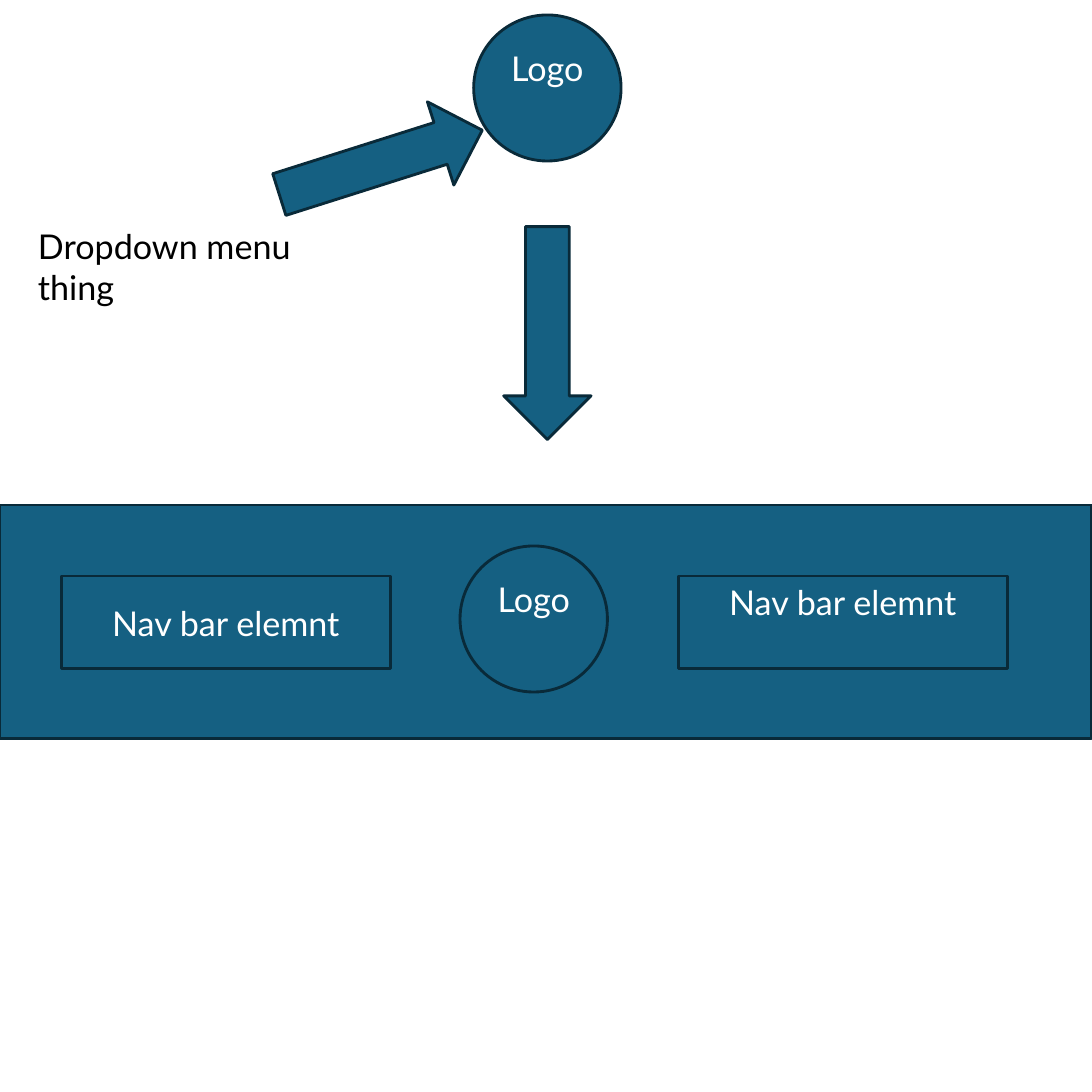
from pptx import Presentation
from pptx.dml.color import RGBColor
from pptx.enum.shapes import MSO_SHAPE
from pptx.enum.text import MSO_ANCHOR, PP_ALIGN
from pptx.util import Emu, Pt

EMU_PER_PX = 9144  # 100 px to the inch
SLIDE_SIZE = 800
INSET = 5
LINE_HEIGHT = 30
COLORS = {"fill": "156082", "outline": "092A39", "light": "FFFFFF", "dark": "000000"}


def px(length):
    return Emu(length * EMU_PER_PX)


def color(name):
    return RGBColor.from_string(COLORS[name])


def write_text(frame, text, font="Lato", size=18, ink="light",
               align=PP_ALIGN.CENTER, anchor=MSO_ANCHOR.MIDDLE, bottom=INSET):
    frame.word_wrap = True
    frame.vertical_anchor = anchor
    frame.margin_bottom = px(bottom)
    paragraph = frame.paragraphs[0]
    paragraph.alignment = align
    run = paragraph.add_run()
    run.text = text
    run.font.name = font
    run.font.size = Pt(size)
    run.font.color.rgb = color(ink)


class Wireframe:
    def __init__(self, slide, line_width=1.5):
        self.slide = slide
        self.line_width = Pt(line_width)

    def block(self, kind, left, top, width, height, rotation=0):
        shape = self.slide.shapes.add_shape(
            kind, px(left), px(top), px(width), px(height))
        shape.rotation = rotation
        shape.shadow.inherit = False
        shape.fill.solid()
        shape.fill.fore_color.rgb = color("fill")
        shape.line.color.rgb = color("outline")
        shape.line.width = self.line_width
        return shape

    def logo(self, left, top):
        shape = self.block(MSO_SHAPE.OVAL, left, top, 108, 107)
        write_text(shape.text_frame, "Logo", bottom=INSET + LINE_HEIGHT)

    def nav_element(self, left, bottom=INSET):
        shape = self.block(MSO_SHAPE.RECTANGLE, left, 422, 241, 68)
        write_text(shape.text_frame, "Nav bar elemnt", bottom=bottom)

    def arrow(self, left, top, rotation):
        self.block(MSO_SHAPE.UP_ARROW, left, top, 64, 156, rotation)

    def label(self, text, left, top, width, height):
        box = self.slide.shapes.add_textbox(px(left), px(top), px(width), px(height))
        write_text(box.text_frame, text, ink="dark",
                   align=PP_ALIGN.LEFT, anchor=MSO_ANCHOR.TOP)


def main():
    presentation = Presentation()
    presentation.slide_width = presentation.slide_height = px(SLIDE_SIZE)
    wireframe = Wireframe(presentation.slides.add_slide(presentation.slide_layouts[6]))

    # Logo at the top
    wireframe.logo(347, 11)

    # Navigation bar with its logo and elements
    wireframe.block(MSO_SHAPE.RECTANGLE, 0, 370, SLIDE_SIZE, 171)
    wireframe.logo(337, 400)
    wireframe.nav_element(45)
    wireframe.nav_element(497, bottom=INSET + LINE_HEIGHT)

    # Arrows and the dropdown note
    wireframe.arrow(369, 166, rotation=180)
    wireframe.label("Dropdown menu thing", 18, 160, 261, 70)
    wireframe.arrow(247, 41, rotation=72.4)

    presentation.save("out.pptx")


if __name__ == "__main__":
    main()
